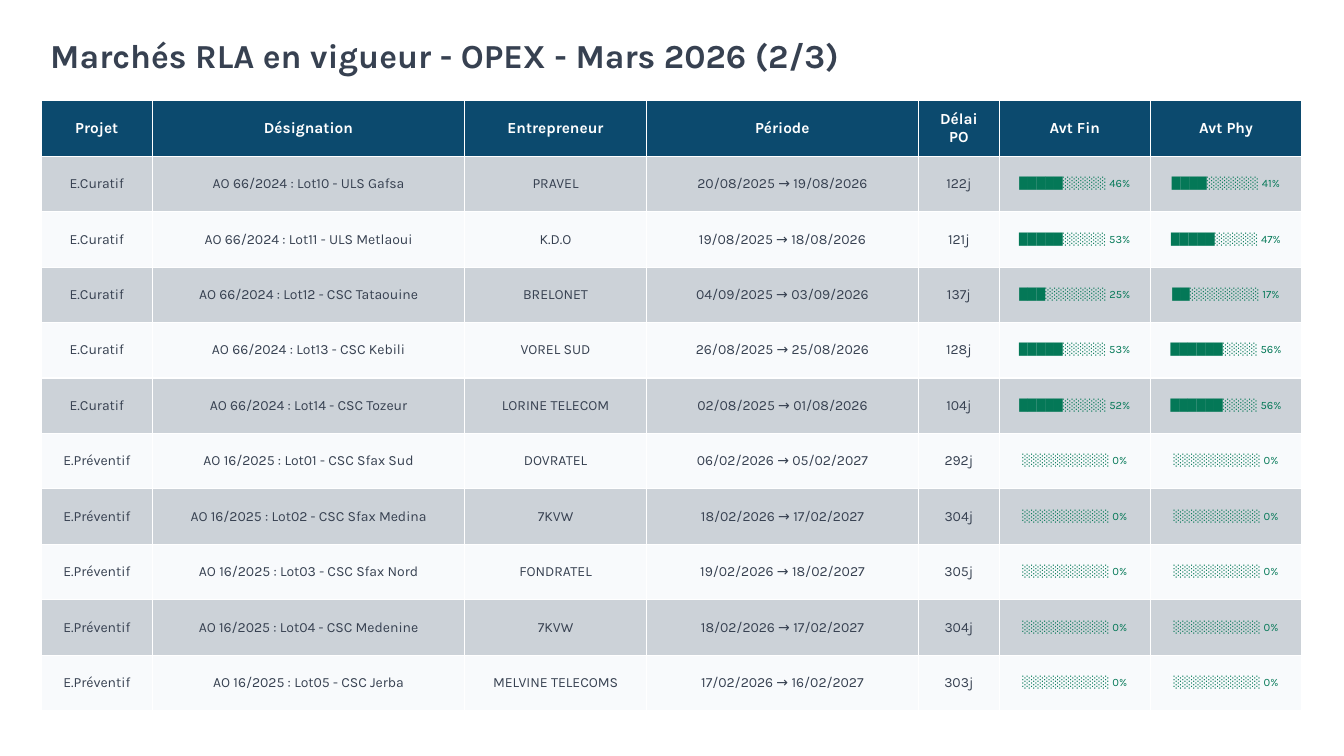
"""Build the slide listing the OPEX maintenance contracts in force."""
from typing import NamedTuple

from pptx import Presentation
from pptx.dml.color import RGBColor
from pptx.enum.text import MSO_ANCHOR, MSO_AUTO_SIZE, PP_ALIGN
from pptx.slide import Slide
from pptx.table import _Cell
from pptx.text.text import _Run
from pptx.util import Emu, Pt

MIDDLE = MSO_ANCHOR.MIDDLE
CENTER = PP_ALIGN.CENTER
GROW = MSO_AUTO_SIZE.SHAPE_TO_FIT_TEXT

EMU_PER_PX = 9144
FONT = "Karla"
COLORS = {
    "text": "374151",
    "header": "0C4A6E",
    "header_text": "FFFFFF",
    "odd_row": "CCD2D8",
    "even_row": "F8FAFC",
    "progress": "047857",
}
ROW_HEIGHT = 55
BAR_STEPS = 10


class Column(NamedTuple):
    heading: str
    width: int
    size: int = 10
    color: str = "text"


class Contract(NamedTuple):
    project: str
    lot: str
    contractor: str
    start: str
    end: str
    days_left: int
    financial: int
    physical: int


COLUMNS = [
    Column("Projet", 110),
    Column("Désignation", 310),
    Column("Entrepreneur", 180),
    Column("Période", 270),
    Column("Délai PO", 80),
    Column("Avt Fin", 150, 8, "progress"),
    Column("Avt Phy", 150, 8, "progress"),
]

CURATIVE, PREVENTIVE = "E.Curatif", "E.Préventif"
TENDERS = {CURATIVE: "AO 66/2024", PREVENTIVE: "AO 16/2025"}

CONTRACTS = [
    Contract(CURATIVE, "Lot10 - ULS Gafsa", "PRAVEL", "20/08/2025", "19/08/2026", 122, 46, 41),
    Contract(CURATIVE, "Lot11 - ULS Metlaoui", "K.D.O", "19/08/2025", "18/08/2026", 121, 53, 47),
    Contract(CURATIVE, "Lot12 - CSC Tataouine", "BRELONET", "04/09/2025", "03/09/2026", 137, 25, 17),
    Contract(CURATIVE, "Lot13 - CSC Kebili", "VOREL SUD", "26/08/2025", "25/08/2026", 128, 53, 56),
    Contract(CURATIVE, "Lot14 - CSC Tozeur", "LORINE TELECOM", "02/08/2025", "01/08/2026", 104, 52, 56),
    Contract(PREVENTIVE, "Lot01 - CSC Sfax Sud", "DOVRATEL", "06/02/2026", "05/02/2027", 292, 0, 0),
    Contract(PREVENTIVE, "Lot02 - CSC Sfax Medina", "7KVW", "18/02/2026", "17/02/2027", 304, 0, 0),
    Contract(PREVENTIVE, "Lot03 - CSC Sfax Nord", "FONDRATEL", "19/02/2026", "18/02/2027", 305, 0, 0),
    Contract(PREVENTIVE, "Lot04 - CSC Medenine", "7KVW", "18/02/2026", "17/02/2027", 304, 0, 0),
    Contract(PREVENTIVE, "Lot05 - CSC Jerba", "MELVINE TELECOMS", "17/02/2026", "16/02/2027", 303, 0, 0),
]


def px(length: int) -> Emu:
    return Emu(length * EMU_PER_PX)


def progress_bar(percent: int) -> str:
    filled = (percent + 5) // BAR_STEPS
    return f"{'█' * filled}{'░' * (BAR_STEPS - filled)} {percent}%"


def contract_texts(contract: Contract) -> list[str]:
    return [
        contract.project,
        f"{TENDERS[contract.project]} : {contract.lot}",
        contract.contractor,
        f"{contract.start} → {contract.end}",
        f"{contract.days_left}j",
        progress_bar(contract.financial),
        progress_bar(contract.physical),
    ]


def style_run(run: _Run, size: int, color: str, bold: bool) -> None:
    run.font.name = FONT
    run.font.size = Pt(size)
    run.font.bold = bold
    run.font.color.rgb = RGBColor.from_string(COLORS[color])


def fill_cell(cell: _Cell, text: str, fill: str, size: int, color: str, bold: bool = False) -> None:
    cell.text_frame.text = text
    cell.vertical_anchor = MIDDLE
    cell.fill.solid()
    cell.fill.fore_color.rgb = RGBColor.from_string(COLORS[fill])
    paragraph = cell.text_frame.paragraphs[0]
    paragraph.alignment = CENTER
    style_run(paragraph.runs[0], size, color, bold)


def draw_title(slide: Slide, text: str) -> None:
    title = slide.shapes.add_textbox(px(40), px(30), px(1200), px(60)).text_frame
    title.text = text
    title.word_wrap = False
    title.auto_size = GROW
    style_run(title.paragraphs[0].runs[0], 24, "text", True)


def draw_contracts(slide: Slide) -> None:
    row_count = len(CONTRACTS) + 1
    width = sum(column.width for column in COLUMNS)
    contracts = slide.shapes.add_table(
        row_count, len(COLUMNS), px(41), px(100), px(width), px(row_count * ROW_HEIGHT)
    ).table
    contracts.horz_banding = False
    for index, column in enumerate(COLUMNS):
        contracts.columns[index].width = px(column.width)
        fill_cell(contracts.cell(0, index), column.heading, "header", 11, "header_text", True)
    for row, contract in enumerate(CONTRACTS, start=1):
        fill = "odd_row" if row % 2 else "even_row"
        for index, (column, text) in enumerate(zip(COLUMNS, contract_texts(contract))):
            fill_cell(contracts.cell(row, index), text, fill, column.size, column.color)


def main() -> None:
    deck = Presentation()
    deck.slide_width, deck.slide_height = px(1333), px(750)
    slide = deck.slides.add_slide(deck.slide_layouts[6])
    draw_title(slide, "Marchés RLA en vigueur - OPEX - Mars 2026 (2/3)")
    draw_contracts(slide)
    deck.save("out.pptx")


if __name__ == "__main__":
    main()
